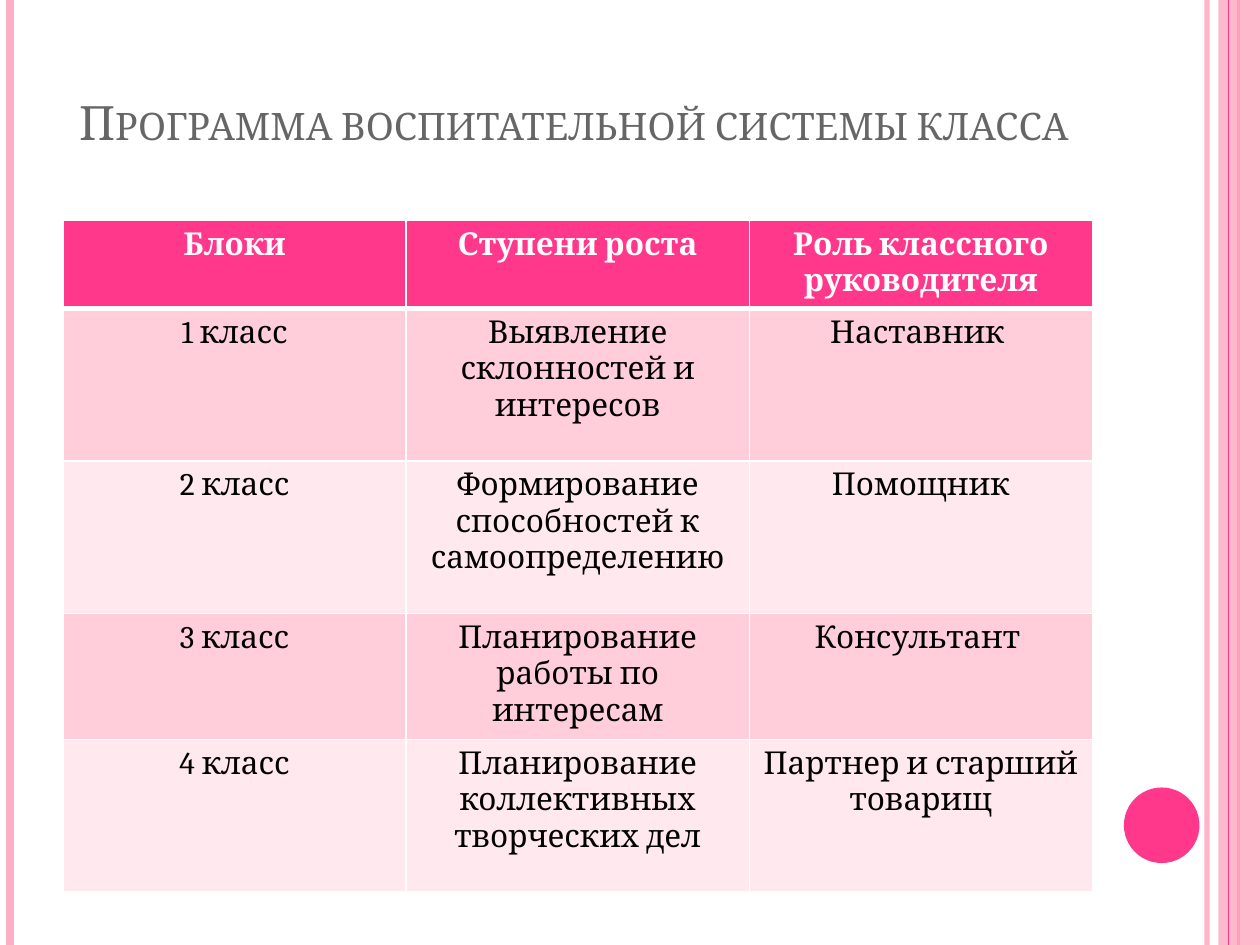
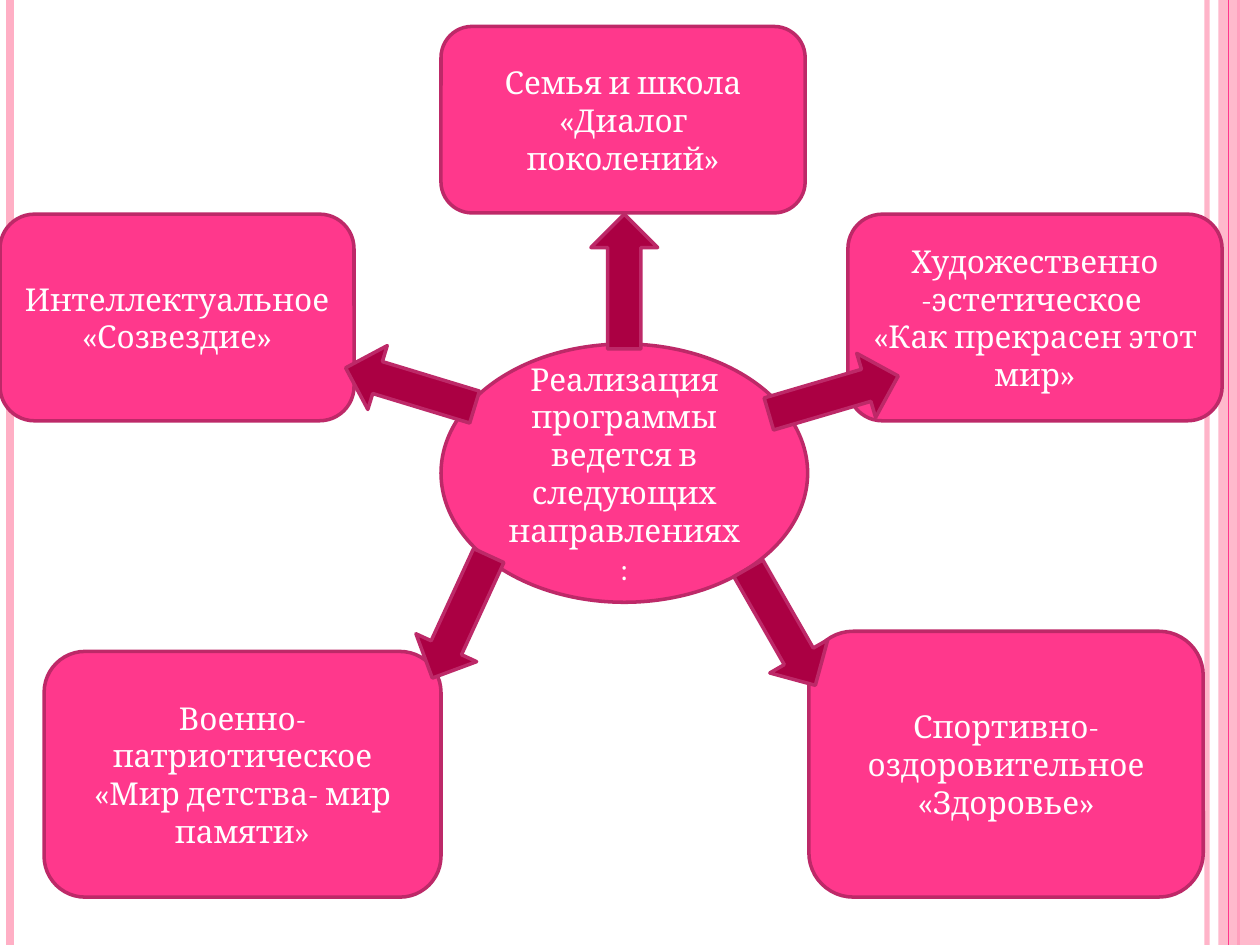
from lxml.etree import SubElement
from pptx import Presentation
from pptx.dml.color import RGBColor as RGB
from pptx.enum.shapes import MSO_CONNECTOR as Link, MSO_SHAPE as Kind
from pptx.enum.text import MSO_ANCHOR as Anchor, PP_ALIGN as Align
from pptx.oxml.ns import qn
from pptx.util import Inches, Pt

WIDE, HIGH = 10, 7.5
FONT = "Cambria"
PINK, PALE, EDGE = RGB(255, 56, 140), RGB(255, 175, 197), RGB(189, 41, 104)
WINE, GREY = RGB(171, 0, 67), RGB(102, 102, 102)
WHITE, BLACK = RGB(255, 255, 255), RGB(0, 0, 0)
BANDS = [RGB(255, 206, 218), RGB(255, 232, 238)]

TITLE = "Программа воспитательной системы класса"
ROWS = [
    ("Блоки", "Ступени роста", "Роль классного руководителя"),
    ("1 класс", "Выявление склонностей и интересов", "Наставник "),
    ("2 класс", "Формирование способностей к самоопределению", "Помощник"),
    ("3 класс", "Планирование работы по интересам", "Консультант "),
    ("4 класс", "Планирование коллективных творческих дел",
     "Партнер и старший товарищ"),
]
TALL = [0.49, 1.21, 1.21, 0.85, 1.21]

# Box: left, top, width, height; then its lines of text
THEMES = [
    ((0, 1.7, 2.81, 1.64), ["Интеллектуальное ", "«Созвездие»"]),
    ((0.35, 5.17, 3.15, 1.95),
     ["Военно-патриотическое", "«Мир детства- мир памяти»"]),
    ((6.42, 5.01, 3.13, 2.11), ["Спортивно-оздоровительное «Здоровье»"]),
    ((6.73, 1.7, 2.97, 1.64),
     ["Художественно -эстетическое ", "«Как прекрасен этот мир»"]),
    ((3.5, 0.21, 2.89, 1.48), ["Семья и школа", "«Диалог поколений»"]),
]
CORE = ((3.5, 2.73, 2.91, 2.05),
        ["Реализация программы ведется в следующих направлениях:"])
ARROW = (0.53, 1.07)
ARROWS = [  # left, top, turn
    (4.69, 1.7, 0), (5.94, 4.44, 150.2), (3.39, 4.36, 204.7),
    (6.35, 2.6, 73.6), (2.99, 2.54, 286.9),
]

# Vertical rules: x, colour, points, opacity in percent
RULES = [(9.58, PALE, 3, 93), (0.08, PALE, 4.5, 100), (9.83, PINK, 1.5, 100)]
INNER = (9.75, PINK, 0.75, 100)
STRIP = (9.67, 0, 0.33, HIGH)
DOT = (8.92, 6.25, 0.6, 0.6)


def inches(box):
    return [Inches(n) for n in box]


def fade(part, share):
    """Make the solid colour inside part partly transparent."""
    if share < 100:
        tint = next(part.iter(qn("a:srgbClr")))
        SubElement(tint, qn("a:alpha"), val=str(share * 1000))


def write(frame, lines, color=WHITE, size=18, bold=False):
    frame.word_wrap = True
    form = {"name": FONT, "size": Pt(size), "bold": bold}
    for i, line in enumerate(lines):
        para = frame.add_paragraph() if i else frame.paragraphs[0]
        para.alignment = Align.CENTER
        run = para.add_run()
        run.text = line
        for key, value in form.items():
            setattr(run.font, key, value)
        run.font.color.rgb = color


def rule(slide, x, color, width, share):
    line = slide.shapes.add_connector(
        Link.STRAIGHT, *inches((x, 0, x, HIGH)))
    line.line.color.rgb = color
    line.line.width = Pt(width)
    props = line._element.spPr
    fade(props, share)
    SubElement(props, qn("a:effectLst"))


def shape(slide, kind, box, fill=PINK, edge=None, lines=()):
    item = slide.shapes.add_shape(kind, *inches(box))
    item.shadow.inherit = False
    item.fill.solid()
    item.fill.fore_color.rgb = fill
    if edge is None:
        item.line.fill.background()
    else:
        item.line.color.rgb = edge
        item.line.width = Pt(2)
    if lines:
        item.text_frame.vertical_anchor = Anchor.MIDDLE
        write(item.text_frame, lines)
    return item


def page(deck):
    """Add a blank slide with the shared side bands."""
    slide = deck.slides.add_slide(deck.slide_layouts[6])
    for spec in RULES:
        rule(slide, *spec)
    strip = shape(slide, Kind.RECTANGLE, STRIP, PALE)
    fade(strip._element.spPr, 87)
    rule(slide, *INNER)
    return slide


def border(cell, head):
    props = cell._tc.get_or_add_tcPr()
    for side in "LRTB":
        width = Pt(3 if head and side == "B" else 1)
        line = SubElement(props, qn(f"a:ln{side}"), w=str(width))
        fill = SubElement(line, qn("a:solidFill"))
        SubElement(fill, qn("a:srgbClr"), val=str(WHITE))


def plan(deck):
    slide = page(deck)
    shape(slide, Kind.OVAL, DOT)
    frame = slide.shapes.add_textbox(
        *inches((0.47, 0.31, 8.17, 0.93))).text_frame
    frame.vertical_anchor = Anchor.BOTTOM
    write(frame, [TITLE], GREY, 27)
    frame.paragraphs[0].runs[0].font._element.set("cap", "small")

    box = (0.5, 1.75, 8.17, sum(TALL))
    grid = slide.shapes.add_table(
        len(ROWS), len(ROWS[0]), *inches(box)).table
    for r, (texts, tall) in enumerate(zip(ROWS, TALL)):
        grid.rows[r].height = Inches(tall)
        head = r == 0
        for c, text in enumerate(texts):
            cell = grid.cell(r, c)
            border(cell, head)
            cell.fill.solid()
            cell.fill.fore_color.rgb = PINK if head else BANDS[(r - 1) % 2]
            write(cell.text_frame, [text], WHITE if head else BLACK,
                  bold=head)


def themes(deck):
    slide = page(deck)
    for box, lines in THEMES:
        shape(slide, Kind.ROUNDED_RECTANGLE, box, PINK, EDGE, lines)
    box, lines = CORE
    shape(slide, Kind.OVAL, box, PINK, EDGE, lines)
    for left, top, turn in ARROWS:
        arrow = shape(slide, Kind.UP_ARROW, (left, top, *ARROW), WINE, EDGE)
        arrow.rotation = turn


def main():
    deck = Presentation()
    deck.slide_width, deck.slide_height = inches((WIDE, HIGH))
    plan(deck)
    themes(deck)
    deck.save("out.pptx")


if __name__ == "__main__":
    main()
